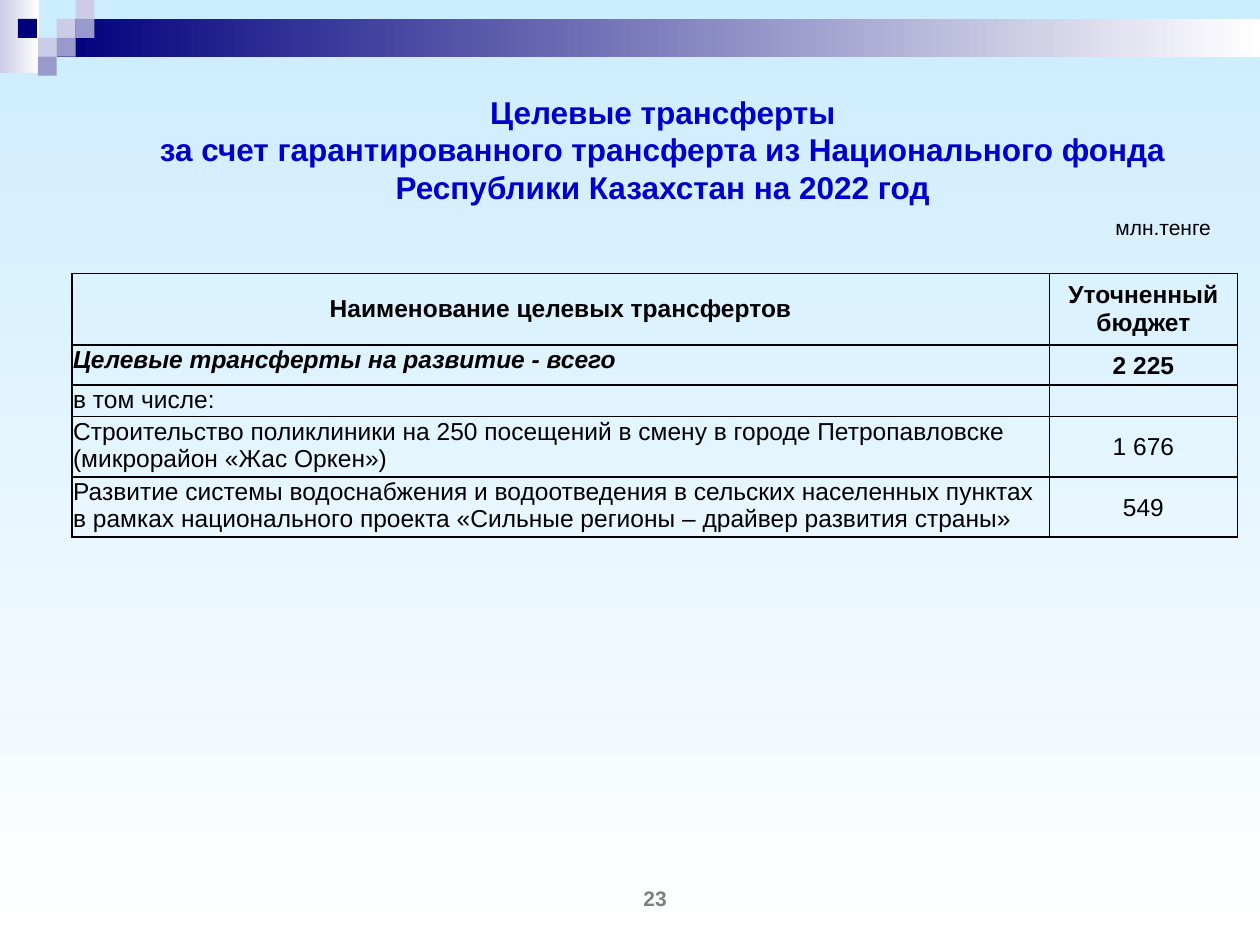
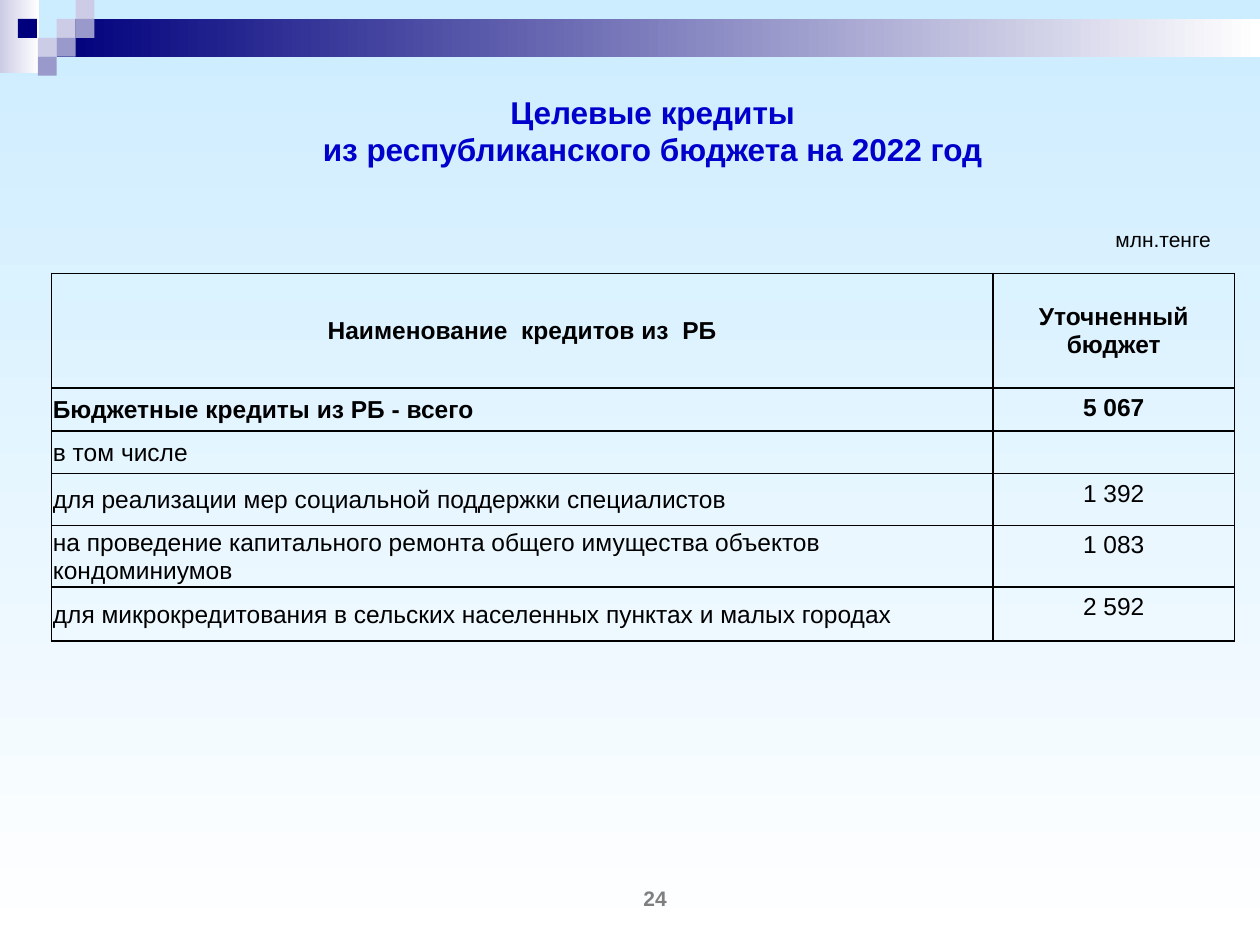
import pptx
import pptx.util
import pptx.dml.color
import pptx.enum.shapes
import pptx.enum.text
import pptx.oxml.ns
import lxml.etree

Inches = pptx.util.Inches
Pt = pptx.util.Pt
Align = pptx.enum.text.PP_ALIGN
Anchor = pptx.enum.text.MSO_ANCHOR

FONT = "Arial"
HUES = {
    "sky": "CCECFF", "white": "FFFFFF", "navy": "00007D", "lilac": "CCCCE6",
    "violet": "9999CC", "title": "0000CC", "ink": "000000", "gray": "7F7F7F",
}
WIDE = (0.1, 0.05, 0.1, 0.05)
TIGHT = (0.01, 0.01, 0.01, 0)


def color(name):
    return pptx.dml.color.RGBColor.from_string(HUES[name])


def blend(fill, start, end, angle):
    fill.gradient()
    fill.gradient_angle = angle
    for stop, name, pos in zip(fill.gradient_stops, (start, end), (0, 1)):
        stop.color.rgb = color(name)
        stop.position = pos


def style(frame, size, hue, align, bold=False, italic=False):
    for para in frame.paragraphs:
        para.alignment = align
        for run in para.runs:
            font = run.font
            font.name, font.size = FONT, Pt(size)
            font.bold, font.italic = bold, italic
            font.color.rgb = color(hue)


def label(slide, box, text, size, hue, align, bold=False):
    frame = slide.shapes.add_textbox(*map(Inches, box)).text_frame
    frame.word_wrap = True
    frame.vertical_anchor = Anchor.MIDDLE
    frame.text = text
    style(frame, size, hue, align, bold)


def block(slide, box, hue, end=None):
    rect = pptx.enum.shapes.MSO_SHAPE.RECTANGLE
    shape = slide.shapes.add_shape(rect, *map(Inches, box))
    shape.shadow.inherit = False
    shape.line.fill.background()
    if end:
        blend(shape.fill, hue, end, 0)
    else:
        shape.fill.solid()
        shape.fill.fore_color.rgb = color(hue)


def band(slide):
    """Top band: two gradient bars and a mosaic of small squares."""
    side = 0.15
    block(slide, (0, 0, 0.31, 0.58), "lilac", "white")
    block(slide, (3 * side, side, 10 - 3 * side, 2 * side), "navy", "white")
    mosaic = [(3, 1, "lilac"), (4, 0, "lilac"), (4, 1, "violet"),
              (2, 2, "lilac"), (0.95, 1, "navy"), (3, 2, "violet"),
              (2, 3, "violet")]
    for col, row, hue in mosaic:
        block(slide, (col * side, row * side, side, side), hue)


def border(cell):
    props = cell._tc.get_or_add_tcPr()
    for spot, edge in enumerate(("lnL", "lnR", "lnT", "lnB")):
        line = lxml.etree.Element(pptx.oxml.ns.qn("a:" + edge), w=str(Pt(1)))
        fill = lxml.etree.SubElement(line, pptx.oxml.ns.qn("a:solidFill"))
        lxml.etree.SubElement(fill, pptx.oxml.ns.qn("a:srgbClr"), val=HUES["ink"])
        props.insert(spot, line)


def fill_cell(cell, text, pad, anchor, align, bold, italic=False):
    sides = map(Inches, pad)
    (cell.margin_left, cell.margin_top,
     cell.margin_right, cell.margin_bottom) = sides
    cell.vertical_anchor = anchor
    cell.fill.background()
    border(cell)
    cell.text_frame.text = text
    style(cell.text_frame, 14, "ink", align, bold, italic)
    if not text:  # keeps an empty cell as low as its row
        para = cell.text_frame.paragraphs[0]._p
        lxml.etree.SubElement(para, pptx.oxml.ns.qn("a:endParaRPr"), sz="1400")


def budget(slide, spot, cols, heights, rows, looks, italic=False):
    """Budget table: header, bold total, then the items.

    looks gives the padding and anchor of the name and sum columns.
    """
    size = (sum(cols), sum(heights))
    table = slide.shapes.add_table(
        len(rows), len(cols), *map(Inches, spot + size)).table
    table.first_row = table.horz_banding = False
    for col, width in zip(table.columns, cols):
        col.width = Inches(width)
    for r, (height, row) in enumerate(zip(heights, rows)):
        table.rows[r].height = Inches(height)
        for c, text in enumerate(row):
            pad, anchor = looks[c]
            if r == 0:
                pad, anchor = WIDE, Anchor.MIDDLE
            elif not text:
                pad = TIGHT
            align = Align.CENTER if r == 0 or c == 1 else Align.LEFT
            fill_cell(table.cell(r, c), text, pad, anchor, align,
                      r < 2, italic and (r, c) == (1, 0))


def page(deck, number, title, left, top, unit):
    """Shared frame: background, band, title, unit and page number."""
    slide = deck.slides.add_slide(deck.slide_layouts[6])
    blend(slide.background.fill, "sky", "white", 270)
    band(slide)
    label(slide, (left, top, 9.54, 0.47), title, 18, "title", Align.CENTER, True)
    label(slide, (8.33, unit, 1.38, 0.24), "млн.тенге", 12, "ink", Align.RIGHT)
    label(slide, (4.2, 7.01, 2, 0.24), str(number), 12, "gray", Align.CENTER, True)
    return slide


def grants(deck):
    slide = page(deck, 23, "Целевые трансферты\vза счет гарантированного трансферта "
                 "из Национального фонда Республики Казахстан на 2022 год",
                 0.49, 0.95, 1.68)
    rows = [
        ("Наименование целевых трансфертов", "Уточненный бюджет"),
        ("Целевые трансферты на развитие - всего", "2 225"),
        ("в том числе:", ""),
        ("Строительство поликлиники на 250 посещений в смену в городе "
         "Петропавловске\n(микрорайон «Жас Оркен»)", "1 676"),
        ("Развитие системы водоснабжения и водоотведения в сельских населенных "
         "пунктах в рамках национального проекта «Сильные регионы – драйвер "
         "развития страны»", "549"),
    ]
    looks = [(TIGHT, Anchor.TOP), (TIGHT, Anchor.MIDDLE)]
    budget(slide, (0.57, 2.17), (7.76, 1.49), (0.53, 0.32, 0.25, 0.45, 0.45),
           rows, looks, italic=True)


def loans(deck):
    slide = page(deck, 24, "Целевые кредиты\vиз республиканского бюджета на 2022 год",
                 0.41, 0.8, 1.78)
    rows = [
        ("Наименование  кредитов из  РБ", "Уточненный бюджет"),
        ("Бюджетные кредиты из РБ - всего", "5 067"),
        ("в том числе", ""),
        ("для реализации мер социальной поддержки специалистов", "1 392"),
        ("на проведение капитального ремонта общего имущества объектов "
         "кондоминиумов", "1 083"),
        ("для микрокредитования в сельских населенных пунктах и малых городах",
         "2 592"),
    ]
    looks = [(TIGHT, Anchor.MIDDLE), (WIDE, Anchor.TOP)]
    budget(slide, (0.41, 2.17), (7.47, 1.92),
           (0.91, 0.34, 0.34, 0.41, 0.49, 0.43), rows, looks)


def main():
    deck = pptx.Presentation()
    deck.slide_width, deck.slide_height = Inches(10), Inches(7.5)
    grants(deck)
    loans(deck)
    deck.save("out.pptx")


if __name__ == "__main__":
    main()
